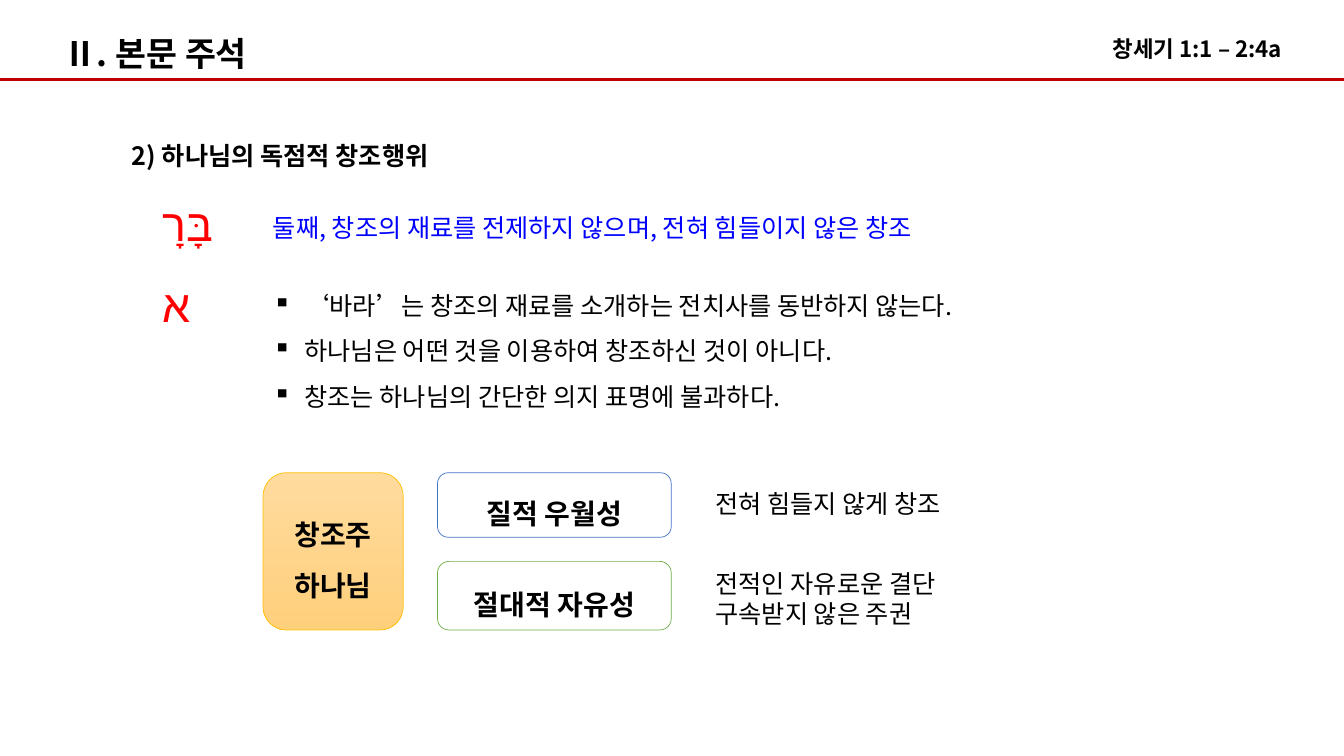
"""Build the commentary slide on God's exclusive act of creation."""
from lxml import etree
from pptx import Presentation
from pptx import util as u
from pptx.dml.color import RGBColor
from pptx.enum import shapes, text
from pptx.oxml.ns import qn

KOREAN = "Noto Sans CJK KR"


def color(value):
    return RGBColor.from_string(value)


def write(shape, lines, size, ink="000000", bold=False, spacing=1.5, align=None, font=KOREAN):
    frame = shape.text_frame
    frame.word_wrap = True
    frame.text = "\n".join(lines)
    for para in frame.paragraphs:
        para.line_spacing = spacing
        para.alignment = align or text.PP_ALIGN.LEFT
        para.font.size = u.Pt(size)
        para.font.bold = bold
        para.font.name = font
        para.font.color.rgb = color(ink)
        for script in ("a:ea", "a:cs"):
            etree.SubElement(para.font._element, qn(script), typeface=font)


deck = Presentation()
deck.slide_width, deck.slide_height = u.Pt(960), u.Pt(540)
page = deck.slides.add_slide(deck.slide_layouts[6])

rule = page.shapes.add_connector(
    shapes.MSO_CONNECTOR.STRAIGHT, u.Pt(0), u.Pt(56.9), u.Pt(960), u.Pt(56.9))
rule.line.color.rgb = color("C00000")
rule.line.width = u.Pt(2.25)
etree.SubElement(rule._element.spPr, qn("a:effectLst"))

bullets = [
    "‘바라’는 창조의 재료를 소개하는 전치사를 동반하지 않는다.",
    "하나님은 어떤 것을 이용하여 창조하신 것이 아니다.",
    "창조는 하나님의 간단한 의지 표명에 불과하다.",
]
decision = ["전적인 자유로운 결단", "구속받지 않은 주권"]
text_boxes = [
    ((787.7, 12.2, 149, 36), ["창세기 1:1 – 2:4a"], dict(size=16, bold=True)),
    ((38.2, 20.2, 159.1, 36), ["Ⅱ. 본문 주석"], dict(size=24, bold=True, spacing=1)),
    ((87.1, 85.7, 258.5, 40.3), ["2) 하나님의 독점적 창조행위"], dict(size=18, bold=True)),
    ((108.7, 118.1, 67, 65.5), ["בָּרָא"], dict(size=32, ink="FF0000", font="Arial")),
    ((187.9, 137.5, 528.5, 40.3), ["둘째, 창조의 재료를 전제하지 않으며, 전혀 힘들이지 않은 창조"],
     dict(size=18, ink="0000FF")),
    ((504, 345.6, 233.3, 28.8), ["전혀 힘들지 않게 창조"], dict(size=18, spacing=1)),
    ((504, 402.5, 244.1, 51.1), decision, dict(size=18, spacing=1)),
    ((187.9, 193, 524.2, 105.1), bullets, dict(size=18)),
]
for place, lines, style in text_boxes:
    box = page.shapes.add_textbox(*map(u.Pt, place))
    write(box, lines, **style)
    box.text_frame.auto_size = text.MSO_AUTO_SIZE.SHAPE_TO_FIT_TEXT

for para in box.text_frame.paragraphs:
    properties = para._p.get_or_add_pPr()
    properties.set("marL", str(u.Pt(22.5)))
    properties.set("indent", str(u.Pt(-22.5)))
    mark = etree.Element(qn("a:buChar"), char="▪")
    properties.find(qn("a:defRPr")).addprevious(mark)

cards = [
    ((187.9, 337.7, 100.1, 112.3), ["창조주", "하나님"], "FFC000", ("FFDB9E", "FFD07C")),
    ((312.5, 337.7, 167, 46.1), ["질적 우월성"], "4472C4", None),
    ((312.5, 401, 167, 49), ["절대적 자유성"], "70AD47", None),
]
for place, lines, outline, shades in cards:
    card = page.shapes.add_shape(shapes.MSO_SHAPE.ROUNDED_RECTANGLE, *map(u.Pt, place))
    card.shadow.inherit = False
    card.line.color.rgb = color(outline)
    card.line.width = u.Pt(0.5)
    if shades:
        card.fill.gradient()
        card.fill.gradient_angle = 270
        for stop, shade in zip(card.fill.gradient_stops, shades):
            stop.color.rgb = color(shade)
    else:
        card.fill.background()
    card.text_frame.vertical_anchor = text.MSO_ANCHOR.MIDDLE
    write(card, lines, 20, bold=True, align=text.PP_ALIGN.CENTER)

deck.save("out.pptx")
